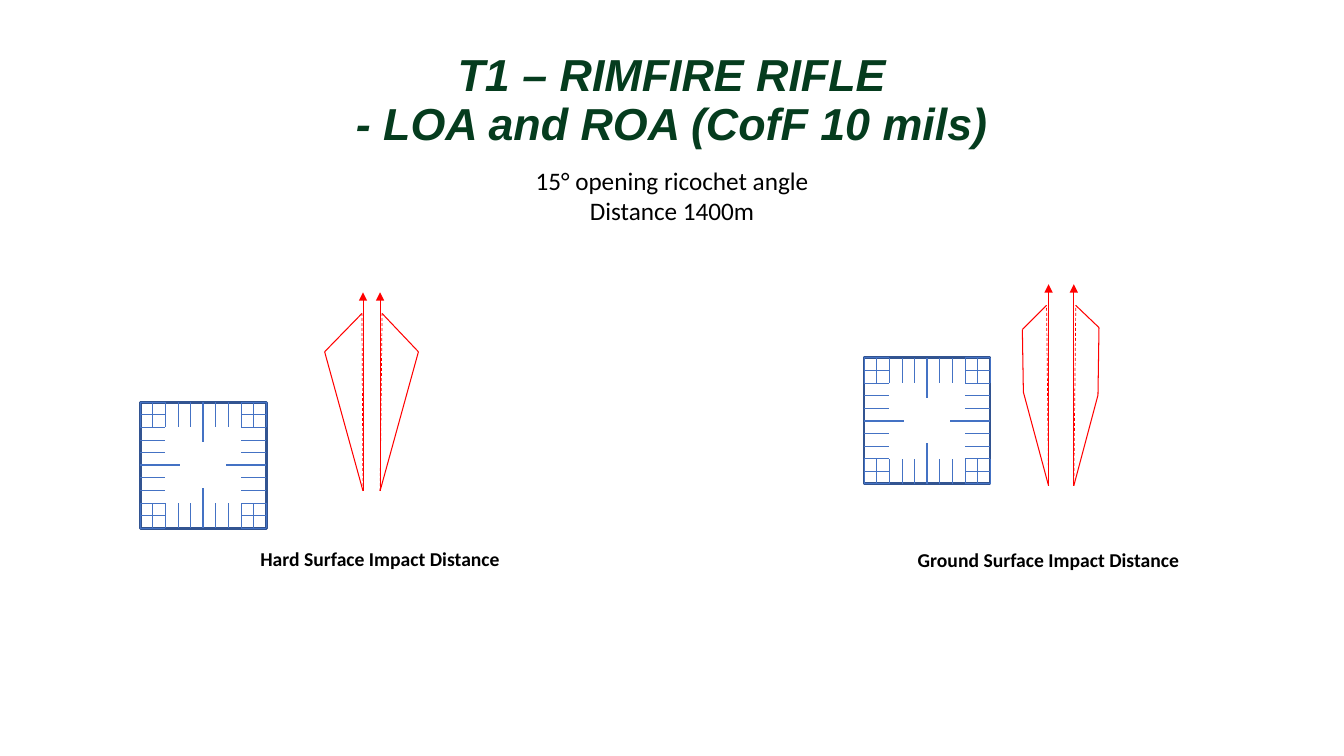
from pptx import Presentation
from pptx.dml.color import RGBColor
from pptx.enum.dml import MSO_LINE
from pptx.enum.shapes import MSO_CONNECTOR, MSO_SHAPE
from pptx.enum.text import MSO_ANCHOR, PP_ALIGN
from pptx.oxml.ns import qn
from pptx.util import Inches, Pt
from lxml.etree import SubElement

GREEN = RGBColor(0x05, 0x3C, 0x1E)
BLACK = RGBColor(0, 0, 0)
BLUE = RGBColor(0x44, 0x72, 0xC4)
NAVY = RGBColor(0x32, 0x54, 0x91)
RED = RGBColor(0xFF, 0, 0)

deck = Presentation()
deck.slide_width, deck.slide_height = Inches(13.33), Inches(7.5)
slide = deck.slides.add_slide(deck.slide_layouts[6])


def add_text(box, lines, form, space=1.0, anchor=MSO_ANCHOR.TOP):
    frame = slide.shapes.add_textbox(*map(Inches, box)).text_frame
    frame.word_wrap = True
    frame.vertical_anchor = anchor
    for row, line in enumerate(lines):
        para = frame.add_paragraph() if row else frame.paragraphs[0]
        para.alignment = PP_ALIGN.CENTER
        para.line_spacing = space
        run = para.add_run()
        run.text = line
        run.font.color.rgb = form["color"]
        for key, value in form.items():
            if key != "color":
                setattr(run.font, key, value)


def add_line(group, start, end, color, width, dash=None, arrow=False):
    line = group.shapes.add_connector(
        MSO_CONNECTOR.STRAIGHT, *map(Inches, (*start, *end)))
    line.line.color.rgb = color
    line.line.width = Pt(width)
    if dash:
        line.line.dash_style = dash
    props = line._element.spPr
    if arrow:
        SubElement(props.find(qn("a:ln")), qn("a:tailEnd"), type="triangle")
    SubElement(props, qn("a:effectLst"))
    return line


# Captions and title
label = {"name": "Calibri", "size": Pt(14), "bold": True, "color": BLACK}
add_text((1.88, 5.38, 3.78, 0.34), ["Hard Surface Impact Distance"], label)
add_text((8.51, 5.39, 3.78, 0.34), ["Ground Surface Impact Distance"], label)
add_text((0, 0.43, 13.33, 1.15),
         ["T1 – RIMFIRE RIFLE", "- LOA and ROA (CofF 10 mils)"],
         {"name": "Arial", "size": Pt(32), "bold": True, "italic": True,
          "color": GREEN}, 0.9, MSO_ANCHOR.MIDDLE)
add_text((4.62, 1.59, 4.09, 0.71),
         ["15° opening ricochet angle", "Distance 1400m"],
         {"name": "Calibri", "size": Pt(18), "color": BLACK})

# Square scales: ten steps a side, long heavy tick in the middle
SIDE, STEPS = 1.25, 10
for left, top in [(1.39, 3.99), (8.57, 3.55)]:
    group = slide.shapes.add_group_shape()
    square = group.shapes.add_shape(
        MSO_SHAPE.RECTANGLE, *map(Inches, (left, top, SIDE, SIDE)))
    square.shadow.inherit = False
    square.fill.background()
    square.line.color.rgb = NAVY
    square.line.width = Pt(2)
    right, base = left + SIDE, top + SIDE
    for step in range(STEPS + 1):
        mid = step == STEPS // 2
        size, width = (0.4, 1.75) if mid else (0.25, 0.5)
        x, y = left + step * SIDE / STEPS, top + step * SIDE / STEPS
        ticks = [((x, top), (x, top + size)),
                 ((left, y), (left + size, y)),
                 ((x, base), (x, base - size)),
                 ((right, y), (right - size, y))]
        for site, (start, end) in enumerate(ticks):
            tick = add_line(group, start, end, BLUE, width)
            if mid:
                tick.begin_connect(square, site)

# Danger areas: arrow of fire, outer edge, dashed inner edge
areas = [
    ((3.6, 4.87), 2.9, [(3.59, 3.11), (3.22, 3.49)]),
    ((3.77, 4.87), 2.9, [(3.79, 3.11), (4.15, 3.49)]),
    ((10.4, 4.82), 2.82, [(10.38, 3.03), (10.14, 3.27), (10.15, 3.89)]),
    ((10.65, 4.82), 2.82, [(10.67, 3.03), (10.9, 3.25), (10.89, 3.92)]),
]
for foot, tip, edge in areas:
    group = slide.shapes.add_group_shape()
    add_line(group, foot, (foot[0], tip), RED, 0.5, arrow=True)
    for start, end in zip(edge, edge[1:] + [foot]):
        add_line(group, start, end, RED, 0.75)
    add_line(group, foot, edge[0], RED, 0.5, dash=MSO_LINE.DASH)

deck.save("out.pptx")
